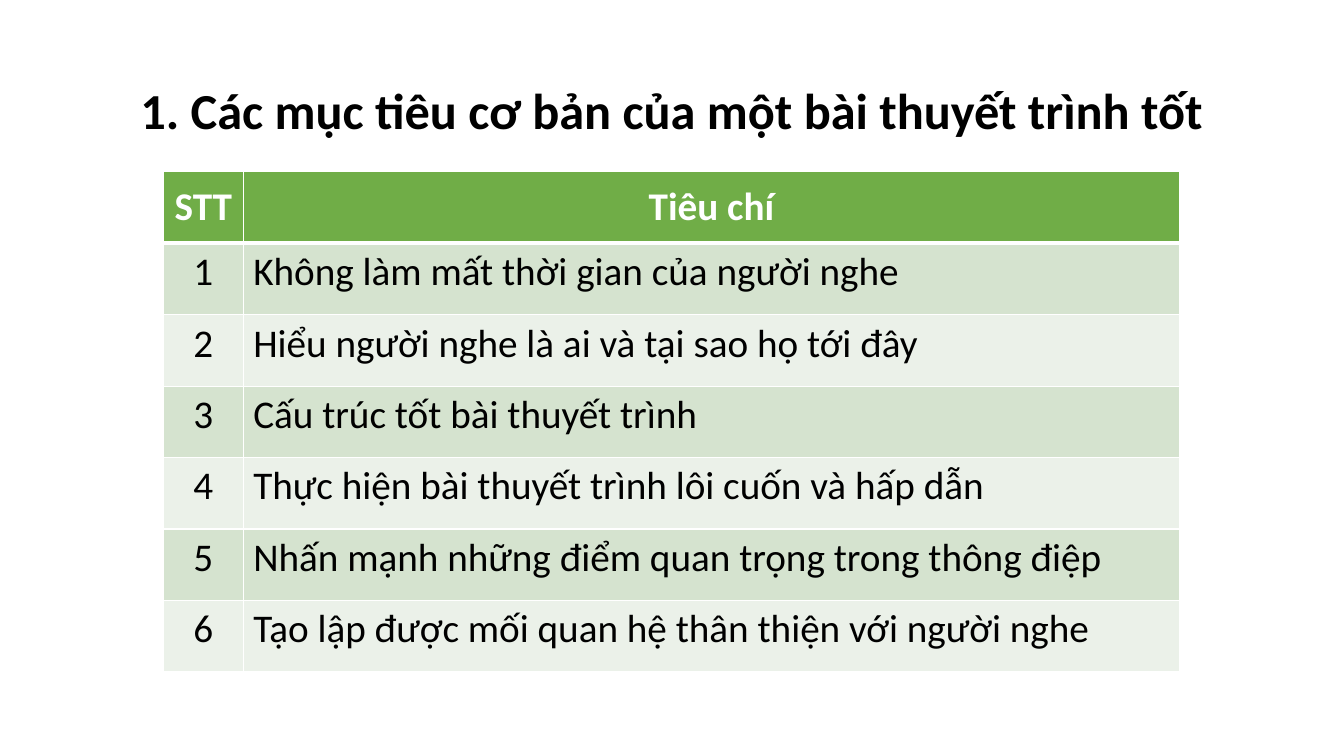
from dataclasses import dataclass

from lxml import etree
from pptx import Presentation
from pptx.dml.color import RGBColor
from pptx.enum.text import MSO_ANCHOR, PP_ALIGN
from pptx.oxml.ns import qn
from pptx.util import Cm, Pt

LEFT, CENTER = PP_ALIGN.LEFT, PP_ALIGN.CENTER
TOP, MIDDLE = MSO_ANCHOR.TOP, MSO_ANCHOR.MIDDLE


@dataclass(frozen=True)
class Theme:
    font: str = "Calibri"
    title_size: int = 36
    table_size: int = 28
    text: str = "000000"
    light: str = "FFFFFF"
    header: str = "70AD47"
    bands: tuple = ("D5E3CF", "EBF1E9")
    border: int = 1
    header_border: int = 3


@dataclass(frozen=True)
class Box:
    left: int
    top: int
    width: int
    height: int


THEME = Theme()
TITLE = "1. Các mục tiêu cơ bản của một bài thuyết trình tốt"
HEADINGS = ("STT", "Tiêu chí")
CRITERIA = (
    "Không làm mất thời gian của người nghe",
    "Hiểu người nghe là ai và tại sao họ tới đây",
    "Cấu trúc tốt bài thuyết trình",
    "Thực hiện bài thuyết trình lôi cuốn và hấp dẫn",
    "Nhấn mạnh những điểm quan trọng trong thông điệp",
    "Tạo lập được mối quan hệ thân thiện với người nghe",
)
NUMBER_WIDTH = Cm(2.01)


def write_text(text_frame, text, size, color, bold, alignment):
    paragraph = text_frame.paragraphs[0]
    paragraph.alignment = alignment
    run = paragraph.add_run()
    run.text = text
    run.font.name = THEME.font
    run.font.size = Pt(size)
    run.font.bold = bold
    run.font.color.rgb = RGBColor.from_string(color)
    return paragraph


def set_borders(cell, top, bottom):
    properties = cell._tc.get_or_add_tcPr()
    widths = {"L": THEME.border, "R": THEME.border, "T": top, "B": bottom}
    for side, width in widths.items():
        line = etree.SubElement(properties, qn(f"a:ln{side}"), w=str(Pt(width)))
        fill = etree.SubElement(line, qn("a:solidFill"))
        etree.SubElement(fill, qn("a:srgbClr"), val=THEME.light)


def add_title(slide, box):
    shape = slide.shapes.add_textbox(box.left, box.top, box.width, box.height)
    text_frame = shape.text_frame
    text_frame.word_wrap = True
    text_frame.vertical_anchor = MIDDLE
    paragraph = write_text(text_frame, TITLE, THEME.title_size, THEME.text, True, CENTER)
    paragraph.line_spacing = 0.9


def add_criteria_table(slide, box):
    rows = [HEADINGS] + [(str(number), text) for number, text in enumerate(CRITERIA, 1)]
    table = slide.shapes.add_table(
        len(rows), len(HEADINGS), box.left, box.top, box.width, box.height
    ).table
    table.columns[0].width = NUMBER_WIDTH
    table.columns[1].width = box.width - NUMBER_WIDTH
    for row_index, row in enumerate(rows):
        is_header = row_index == 0
        fill = THEME.header if is_header else THEME.bands[(row_index - 1) % 2]
        color = THEME.light if is_header else THEME.text
        top = THEME.header_border if row_index == 1 else THEME.border
        bottom = THEME.header_border if is_header else THEME.border
        for column_index, text in enumerate(row):
            cell = table.cell(row_index, column_index)
            set_borders(cell, top, bottom)
            cell.fill.solid()
            cell.fill.fore_color.rgb = RGBColor.from_string(fill)
            cell.vertical_anchor = MIDDLE if is_header else TOP
            alignment = CENTER if is_header or column_index == 0 else LEFT
            write_text(cell.text_frame, text, THEME.table_size, color, is_header, alignment)


def main():
    presentation = Presentation()
    presentation.slide_width = Cm(33.87)
    presentation.slide_height = Cm(19.05)
    slide = presentation.slides.add_slide(presentation.slide_layouts[6])
    add_title(slide, Box(Cm(2.33), Cm(1.01), Cm(29.21), Cm(3.68)))
    add_criteria_table(slide, Box(Cm(4.12), Cm(4.33), Cm(25.61), Cm(12.6)))
    presentation.save("out.pptx")


if __name__ == "__main__":
    main()
